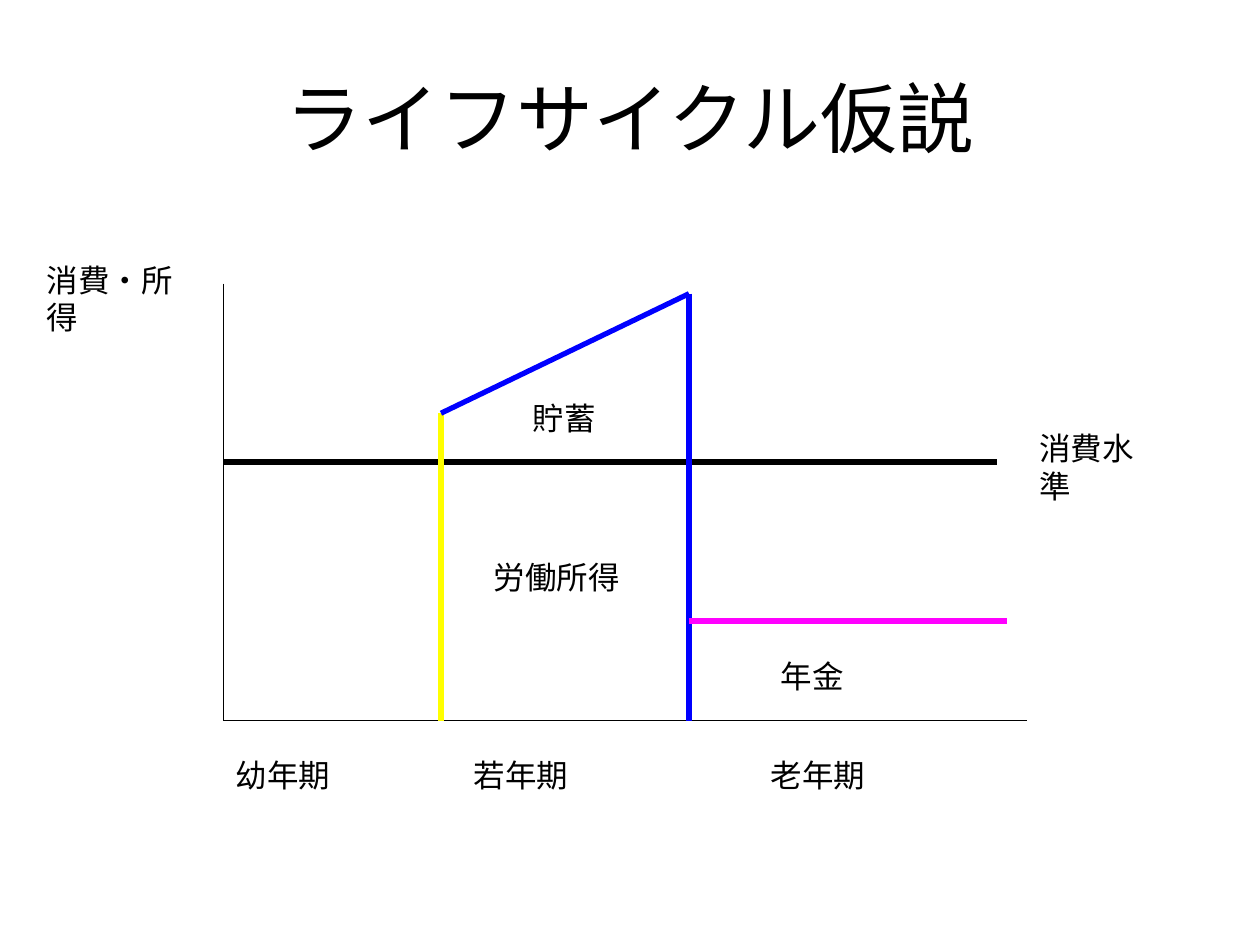
"""Build the life-cycle hypothesis slide."""
from dataclasses import dataclass

from lxml import etree
from pptx import Presentation
from pptx.dml.color import RGBColor
from pptx.enum.shapes import MSO_CONNECTOR
from pptx.enum.text import MSO_ANCHOR, MSO_AUTO_SIZE, PP_ALIGN
from pptx.oxml.ns import qn
from pptx.slide import Slide
from pptx.text.text import TextFrame
from pptx.util import Cm, Pt

STRAIGHT = MSO_CONNECTOR.STRAIGHT
MIDDLE = MSO_ANCHOR.MIDDLE
GROW = MSO_AUTO_SIZE.SHAPE_TO_FIT_TEXT
NO_FIT = MSO_AUTO_SIZE.NONE
CENTER = PP_ALIGN.CENTER
LEFT = PP_ALIGN.LEFT

BLACK = RGBColor(0, 0, 0)
YELLOW = RGBColor(255, 255, 0)
BLUE = RGBColor(0, 0, 255)
PINK = RGBColor(255, 0, 255)
SANS = "Noto Sans CJK JP"
SERIF = "Times New Roman"

BIRTH, WORK, RETIRE, END = 4.5, 8.89, 13.89, 20.7
TOP, PEAK, START, LEVEL, PENSION, BASE = 5.72, 5.92, 8.33, 9.32, 12.52, 14.53
STAGE = 15.11


@dataclass
class Line:
    x1: float
    y1: float
    x2: float
    y2: float
    color: RGBColor = BLACK
    width: float = 3


@dataclass
class Label:
    text: str
    x: float
    y: float
    width: float
    height: float = 1.02


LINES = [
    Line(BIRTH, TOP, BIRTH, BASE, width=0.75),
    Line(BIRTH, BASE, END, BASE, width=0.75),
    Line(BIRTH, LEVEL, 20.09, LEVEL, width=3.25),
    Line(WORK, START, WORK, BASE, YELLOW),
    Line(RETIRE, PEAK, RETIRE, BASE, BLUE),
    Line(RETIRE, PENSION, 20.29, PENSION, PINK),
    Line(WORK, START, RETIRE, PEAK, BLUE),
]

LABELS = [
    Label("消費・所得", 0.69, 5.13, 3.4),
    Label("貯蓄", 10.49, 7.92, 2.39),
    Label("幼年期", BIRTH, STAGE, 4.19),
    Label("若年期", 9.3, STAGE, 5),
    Label("老年期", 15.29, STAGE, 5.21),
    Label("消費水準", END, 8.53, 3, 1.78),
    Label("年金", 15.49, 13.13, 4.19),
    Label("労働所得", 9.7, 11.13, 3.2),
]


def write(frame: TextFrame, text: str, size: float, face: str, align: PP_ALIGN) -> None:
    para = frame.paragraphs[0]
    para.alignment = align
    run = para.add_run()
    run.text = text
    font = run.font
    font.size = Pt(size)
    font.name = face
    font.color.rgb = BLACK
    asian = etree.SubElement(run._r.get_or_add_rPr(), qn("a:ea"))
    asian.set("typeface", SANS)


def draw_line(slide: Slide, line: Line) -> None:
    ends = (Cm(v) for v in (line.x1, line.y1, line.x2, line.y2))
    link = slide.shapes.add_connector(STRAIGHT, *ends)
    link.line.color.rgb = line.color
    link.line.width = Pt(line.width)
    etree.SubElement(link._element.spPr, qn("a:effectLst"))


def draw_label(slide: Slide, label: Label) -> None:
    area = (Cm(v) for v in (label.x, label.y, label.width, label.height))
    frame = slide.shapes.add_textbox(*area).text_frame
    frame.word_wrap = True
    frame.auto_size = GROW
    write(frame, label.text, 18, SERIF, LEFT)


def draw_title(slide: Slide, text: str) -> None:
    title = slide.shapes.title
    title.left, title.top = Cm(1.27), Cm(0.76)
    title.width, title.height = Cm(22.86), Cm(3.18)
    frame = title.text_frame
    frame.word_wrap = True
    frame.auto_size = NO_FIT
    frame.vertical_anchor = MIDDLE
    write(frame, text, 44, SANS, CENTER)


def main() -> None:
    deck = Presentation()
    deck.slide_width, deck.slide_height = Cm(25.4), Cm(19.05)
    slide = deck.slides.add_slide(deck.slide_layouts[5])
    draw_title(slide, "ライフサイクル仮説")
    for line in LINES:
        draw_line(slide, line)
    for label in LABELS:
        draw_label(slide, label)
    deck.save("out.pptx")


if __name__ == "__main__":
    main()
